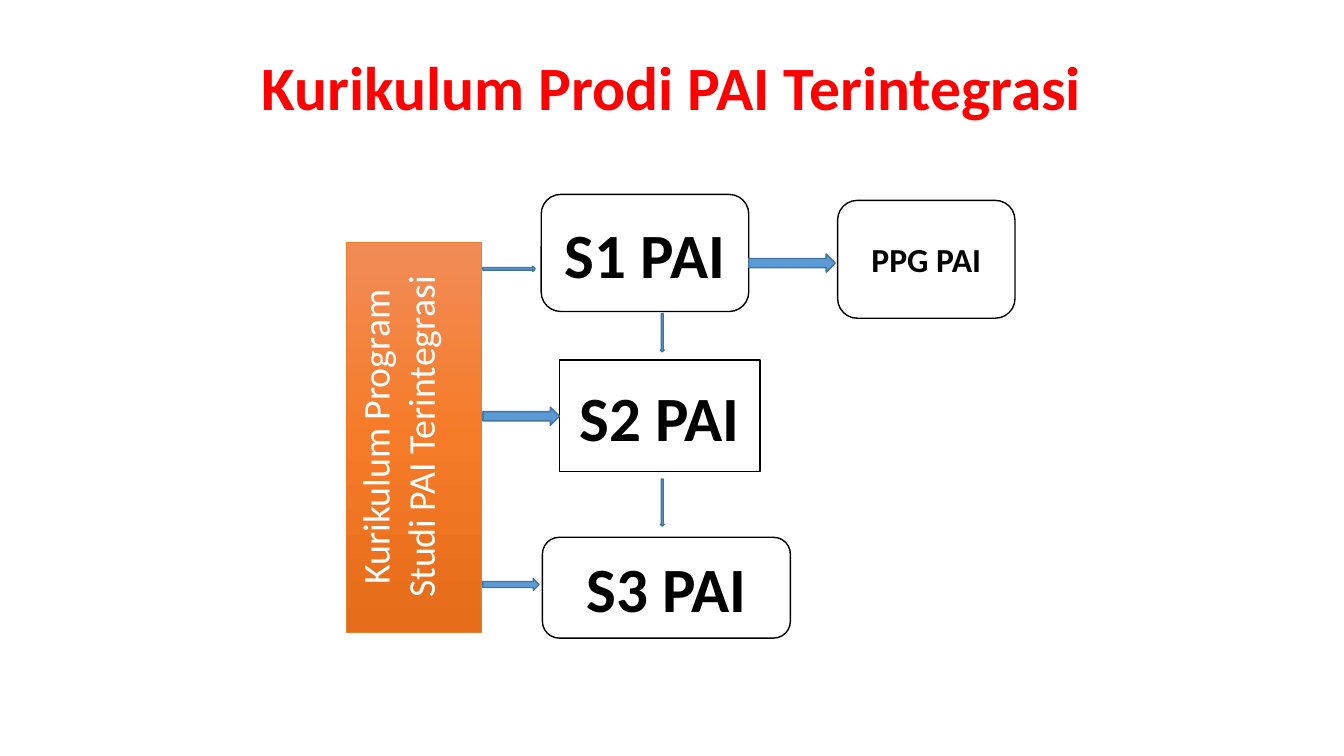
from copy import deepcopy
from pptx import Presentation
from pptx import util as u
from pptx.dml.color import RGBColor
from pptx.enum import shapes, text

HUES = {"title": "FF0000", "ink": "000000", "paper": "FFFFFF",
        "arrow": "5B9BD5", "edge": "43739E", "rim": "ED7D31"}
BLEND = {0: "F18C57", 0.5: "F67B28", 1: "E56C19"}
KIND = shapes.MSO_SHAPE

# Places in cm, relative to the corner of the flow region
BAR = (0, 1.2, 3.4, 9.83)
STEPS = [
    ("S1 PAI", KIND.ROUNDED_RECTANGLE, 45, (4.9, 0, 5.23, 2.95)),
    ("S2 PAI", KIND.RECTANGLE, 45, (5.36, 4.17, 5.05, 2.82)),
    ("S3 PAI", KIND.ROUNDED_RECTANGLE, 45, (4.93, 8.64, 6.25, 2.54)),
    ("PPG PAI", KIND.ROUNDED_RECTANGLE, 24, (12.37, 0.15, 4.47, 2.97)),
]
ARROWS = [
    (KIND.RIGHT_ARROW, (3.43, 1.81, 1.32, 0.13)),
    (KIND.RIGHT_ARROW, (3.43, 5.36, 1.93, 0.46)),
    (KIND.RIGHT_ARROW, (3.43, 9.68, 1.42, 0.3)),
    (KIND.RIGHT_ARROW, (10.13, 1.5, 2.18, 0.46)),
    (KIND.DOWN_ARROW, (7.9, 3, 0.1, 0.97)),
    (KIND.DOWN_ARROW, (7.9, 7.17, 0.1, 1.19)),
]


def tint(name):
    return RGBColor.from_string(HUES[name])


def write(shape, words, size, hue, bold, anchor):
    frame = shape.text_frame
    frame.text = words
    frame.word_wrap = True
    frame.auto_size = text.MSO_AUTO_SIZE.NONE
    frame.vertical_anchor = anchor
    line = frame.paragraphs[0]
    line.alignment = text.PP_ALIGN.CENTER
    font = line.runs[0].font
    font.name, font.size, font.bold = "Calibri", u.Pt(size), bold
    font.color.rgb = tint(hue)


def draw(slide, kind, origin, box, fill, edge, width=1):
    """Add a preset shape at a box relative to the origin."""
    left, top, wide, high = box
    shape = slide.shapes.add_shape(
        kind, u.Cm(origin[0] + left), u.Cm(origin[1] + top), u.Cm(wide), u.Cm(high))
    shape.shadow.inherit = False
    shape.fill.solid()
    shape.fill.fore_color.rgb = tint(fill)
    shape.line.color.rgb = tint(edge)
    shape.line.width = u.Pt(width)
    return shape


def blend(fill):
    """Turn a fill into the three-stop gradient, running downwards."""
    fill.gradient()
    fill.gradient_angle = 270
    stops = fill._fill._gradFill.gsLst
    stops.append(deepcopy(stops[-1]))
    for stop, (place, hue) in zip(fill.gradient_stops, BLEND.items()):
        stop.position = place
        stop.color.rgb = RGBColor.from_string(hue)


def head(slide, left, top, wide, high):
    title = slide.shapes.title
    title.left, title.top = u.Cm(left), u.Cm(top)
    title.width, title.height = u.Cm(wide), u.Cm(high)
    write(title, "Kurikulum Prodi PAI Terintegrasi", 44, "title", True,
          text.MSO_ANCHOR.BOTTOM)
    title.text_frame.paragraphs[0].line_spacing = 0.9


def flow(slide, origin):
    """Place the upright bar, the study levels and their arrows."""
    bar = draw(slide, KIND.RECTANGLE, origin, BAR, "rim", "rim", 0.5)
    blend(bar.fill)
    write(bar, "Kurikulum Program Studi PAI Terintegrasi", 27, "paper", False,
          text.MSO_ANCHOR.TOP)
    bar.text_frame._txBody.bodyPr.set("vert", "vert270")
    for words, kind, size, box in STEPS:
        step = draw(slide, kind, origin, box, "paper", "ink")
        write(step, words, size, "ink", True, text.MSO_ANCHOR.MIDDLE)
    for kind, box in ARROWS:
        draw(slide, kind, origin, box, "arrow", "edge")


def main():
    deck = Presentation()
    deck.slide_width, deck.slide_height = u.Cm(33.87), u.Cm(19.05)
    slide = deck.slides.add_slide(deck.slide_layouts[5])
    head(slide, 3.86, 1.47, 26.16, 1.78)
    flow(slide, (8.74, 4.9))
    deck.save("out.pptx")


if __name__ == "__main__":
    main()
